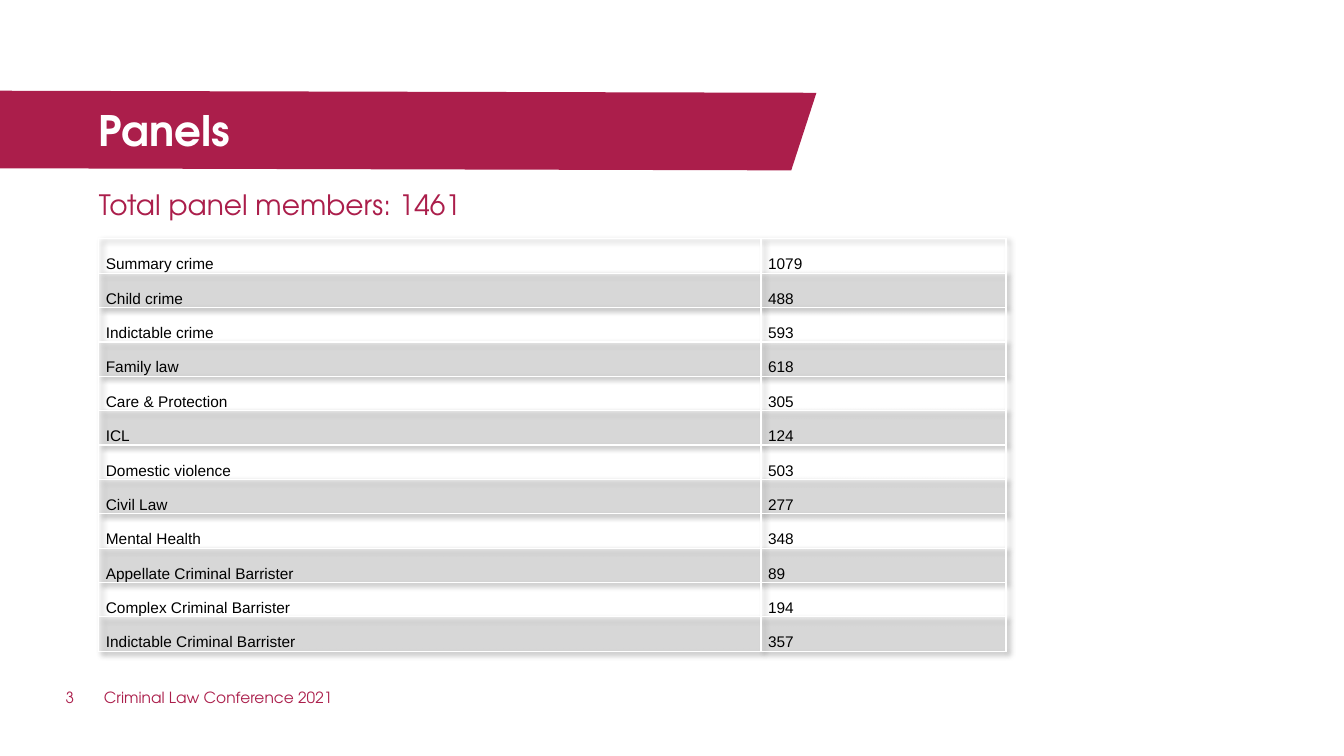
import pptx
import pptx.util
import pptx.dml.color
import pptx.enum.text
import pptx.oxml
import pptx.oxml.ns
from dataclasses import dataclass

Pt = pptx.util.Pt
Color = pptx.dml.color.RGBColor.from_string
Align = pptx.enum.text.PP_ALIGN
Anchor = pptx.enum.text.MSO_ANCHOR
NS = pptx.oxml.ns.nsdecls("a")


@dataclass(frozen=True)
class Theme:
    brand: str = "AB1E4B"
    white: str = "FFFFFF"
    black: str = "000000"
    band: str = "D9D9D9"
    head: str = "TeX Gyre Adventor"
    body: str = "Arial"
    big: int = 30
    mid: int = 20
    small: int = 11


THEME = Theme()

PANELS = [
    ("Summary crime", 1079),
    ("Child crime", 488),
    ("Indictable crime", 593),
    ("Family law", 618),
    ("Care & Protection", 305),
    ("ICL", 124),
    ("Domestic violence", 503),
    ("Civil Law", 277),
    ("Mental Health", 348),
    ("Appellate Criminal Barrister", 89),
    ("Complex Criminal Barrister", 194),
    ("Indictable Criminal Barrister", 357),
]


def write(frame, text, size, color, face=THEME.head, bold=False):
    para = frame.paragraphs[0]
    para.alignment = Align.LEFT
    run = para.add_run()
    run.text = text
    run.font.size = Pt(size)
    run.font.name = face
    run.font.bold = bold
    run.font.color.rgb = Color(color)
    return para


def fit(frame, anchor=Anchor.TOP):
    frame.margin_left = frame.margin_right = 0
    frame.margin_top = frame.margin_bottom = 0
    frame.word_wrap = True
    frame.auto_size = pptx.enum.text.MSO_AUTO_SIZE.NONE
    frame.vertical_anchor = anchor


def label(slide, box, text, size):
    frame = slide.shapes.add_textbox(*map(Pt, box)).text_frame
    fit(frame)
    return write(frame, text, size, THEME.brand)


# Slanted banner with the title on it
def banner(slide, box, text):
    left, top, width, height = box
    skew, slant = 1.5, 18
    right, base = left + width, top + height
    outline = [(right, top + skew), (right - slant, base), (left, base - skew)]
    build = slide.shapes.build_freeform(Pt(left), Pt(top))
    build.add_line_segments([(Pt(x), Pt(y)) for x, y in outline], close=True)
    shape = build.convert_to_shape()
    shape.shadow.inherit = False
    shape.fill.solid()
    shape.fill.fore_color.rgb = Color(THEME.brand)
    shape.line.fill.background()

    title = slide.shapes.title
    title.left, title.top = Pt(left + 70.6), Pt(top + 10)
    title.width, title.height = Pt(491), Pt(35.3)
    fit(title.text_frame, Anchor.MIDDLE)
    write(title.text_frame, text, THEME.big, THEME.white, bold=True)
    # Bring the title in front of the banner
    slide.shapes._spTree.append(title._element)


def style(cell, shade):
    cell.margin_left = cell.margin_right = Pt(5)
    cell.margin_top = cell.margin_bottom = 0
    props = cell._tc.get_or_add_tcPr()
    for side in ("lnL", "lnR", "lnT", "lnB"):
        props.append(pptx.oxml.parse_xml(
            f'<a:{side} {NS} w="{Pt(1)}"><a:solidFill>'
            f'<a:srgbClr val="{THEME.white}"/></a:solidFill></a:{side}>'))
    if shade:
        props.append(pptx.oxml.parse_xml(
            f'<a:solidFill {NS}><a:srgbClr val="{THEME.band}">'
            '<a:alpha val="40000"/></a:srgbClr></a:solidFill>'))
    else:
        cell.fill.background()


# Panel counts, every second row shaded
def counts(slide, box, rows):
    left, top, width, height = box
    frame = slide.shapes.add_table(len(rows), 2, *map(Pt, box))
    table = frame.table
    table.first_row = table.horz_banding = False
    for col, share in zip(table.columns, (0.73, 0.27)):
        col.width = Pt(width * share)
    props = table._tbl.tblPr
    props.find(pptx.oxml.ns.qn("a:tableStyleId")).text = (
        "{2D5ABB26-0587-4C30-8999-92F81FD0307C}")
    props.insert(0, pptx.oxml.parse_xml(
        f'<a:effectLst {NS}><a:outerShdw blurRad="{Pt(4)}" dist="{Pt(3)}" '
        'dir="2700000" algn="tl" rotWithShape="0"><a:srgbClr val="000000">'
        '<a:alpha val="40000"/></a:srgbClr></a:outerShdw></a:effectLst>'))
    for i, row in enumerate(rows):
        table.rows[i].height = Pt(height / len(rows))
        for j, value in enumerate(row):
            cell = table.cell(i, j)
            style(cell, i % 2 == 1)
            para = write(cell.text_frame, str(value), THEME.small,
                         THEME.black, THEME.body)
            para.line_spacing = 2.0
            para.space_after = Pt(8)


# Page number and event name
def footer(slide, box, page, text):
    left, top, width, height = box
    gap = 27.4
    label(slide, (left, top, gap, height), page, THEME.small)
    label(slide, (left + gap, top, width - gap, height), text, THEME.small)


def main():
    deck = pptx.Presentation()
    deck.slide_width, deck.slide_height = Pt(960), Pt(540)
    slide = deck.slides.add_slide(deck.slide_layouts[5])
    banner(slide, (0, 64.8, 583.2, 56.9), "Panels")
    para = label(slide, (70.6, 128.9, 782.6, 33.8),
                 "Total panel members: 1461", THEME.mid)
    para.line_spacing = 1.2
    para.space_after = Pt(2)
    counts(slide, (70.6, 170.6, 648, 294.6), PANELS)
    footer(slide, (46.8, 491.8, 469.5, 25.2), "3",
           "Criminal Law Conference 2021")
    deck.save("out.pptx")


if __name__ == "__main__":
    main()
